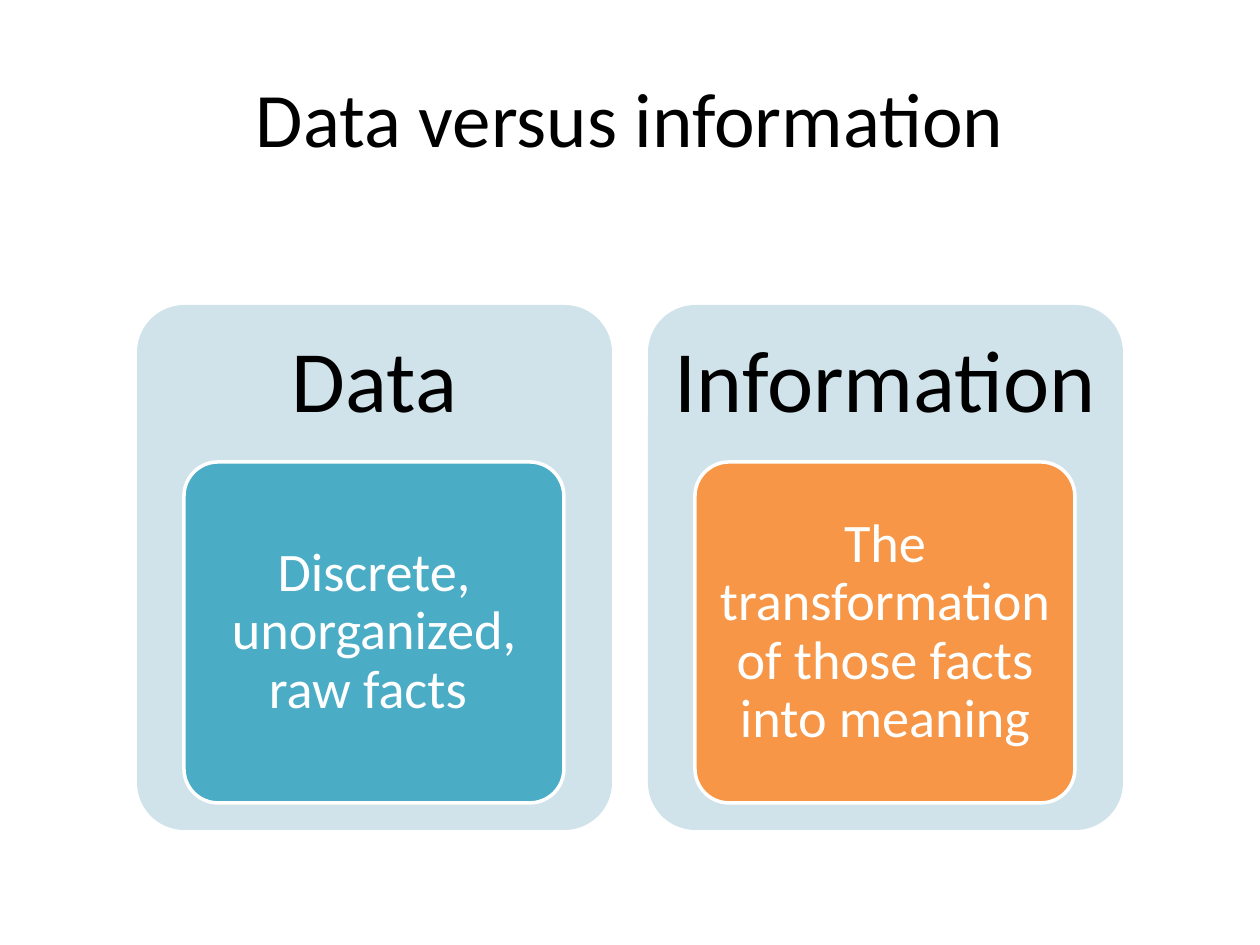
import pptx
import pptx.dml.color
import pptx.enum.shapes
import pptx.enum.text
import pptx.util

EMU_PER_PX = 914400 / 126
FONT = "Calibri"
BLACK = pptx.dml.color.RGBColor(0x00, 0x00, 0x00)
WHITE = pptx.dml.color.RGBColor(0xFF, 0xFF, 0xFF)
PALE_BLUE = pptx.dml.color.RGBColor(0xD0, 0xE3, 0xEA)
TEAL = pptx.dml.color.RGBColor(0x4B, 0xAC, 0xC6)
ORANGE = pptx.dml.color.RGBColor(0xF7, 0x96, 0x46)

PANEL_LEFT, PANEL_TOP, PANEL_WIDTH, PANEL_HEIGHT = 137, 305, 475, 525
PANEL_PITCH = 511
PANELS = [
    ("Data", "Discrete, unorganized, raw facts ", TEAL),
    ("Information", "The transformation of those facts into meaning", ORANGE),
]


def px(length):
    return pptx.util.Emu(round(length * EMU_PER_PX))


def write(shape, text, size, color, insets, line_spacing=1.0):
    """Write one centred run; insets are left, top, right, bottom in px."""
    frame = shape.text_frame
    frame.word_wrap = True
    frame.vertical_anchor = pptx.enum.text.MSO_ANCHOR.MIDDLE
    (frame.margin_left, frame.margin_top,
     frame.margin_right, frame.margin_bottom) = map(px, insets)
    paragraph = frame.paragraphs[0]
    paragraph.alignment = pptx.enum.text.PP_ALIGN.CENTER
    paragraph.line_spacing = line_spacing
    run = paragraph.add_run()
    run.text = text
    run.font.name = FONT
    run.font.size = pptx.util.Pt(size)
    run.font.color.rgb = color


def add_card(slide, box, fill, outline=None):
    card = slide.shapes.add_shape(
        pptx.enum.shapes.MSO_SHAPE.ROUNDED_RECTANGLE, *map(px, box))
    card.adjustments[0] = 0.1
    card.shadow.inherit = False
    card.fill.solid()
    card.fill.fore_color.rgb = fill
    if outline is None:
        card.line.fill.background()
    else:
        card.line.color.rgb = outline
        card.line.width = pptx.util.Pt(2)
    return card


def add_title(slide, box):
    title = slide.shapes.add_textbox(*map(px, box))
    write(title, "Data versus information", 44, BLACK, (13, 6, 13, 6))


def add_panel(slide, box, term, definition, color):
    left, top, width, height = box
    # Pale panel, with the term above the definition
    panel = add_card(slide, box, PALE_BLUE)
    write(panel, term, 50, BLACK, (12, 12, 12, 379), 0.9)
    # Definition card, centred across the panel
    card_width = width * 8 // 10
    card_box = (left + (width - card_width) // 2, top + height * 3 // 10,
                card_width, height * 65 // 100)
    card = add_card(slide, card_box, color, WHITE)
    write(card, definition, 31, WHITE, (11, 8, 11, 8), 0.9)


def main():
    deck = pptx.Presentation()
    deck.slide_width, deck.slide_height = px(1260), px(945)
    slide = deck.slides.add_slide(deck.slide_layouts[6])
    add_title(slide, (63, 38, 1134, 157))
    for index, (term, definition, color) in enumerate(PANELS):
        box = (PANEL_LEFT + index * PANEL_PITCH, PANEL_TOP,
               PANEL_WIDTH, PANEL_HEIGHT)
        add_panel(slide, box, term, definition, color)
    deck.save("out.pptx")


if __name__ == "__main__":
    main()
